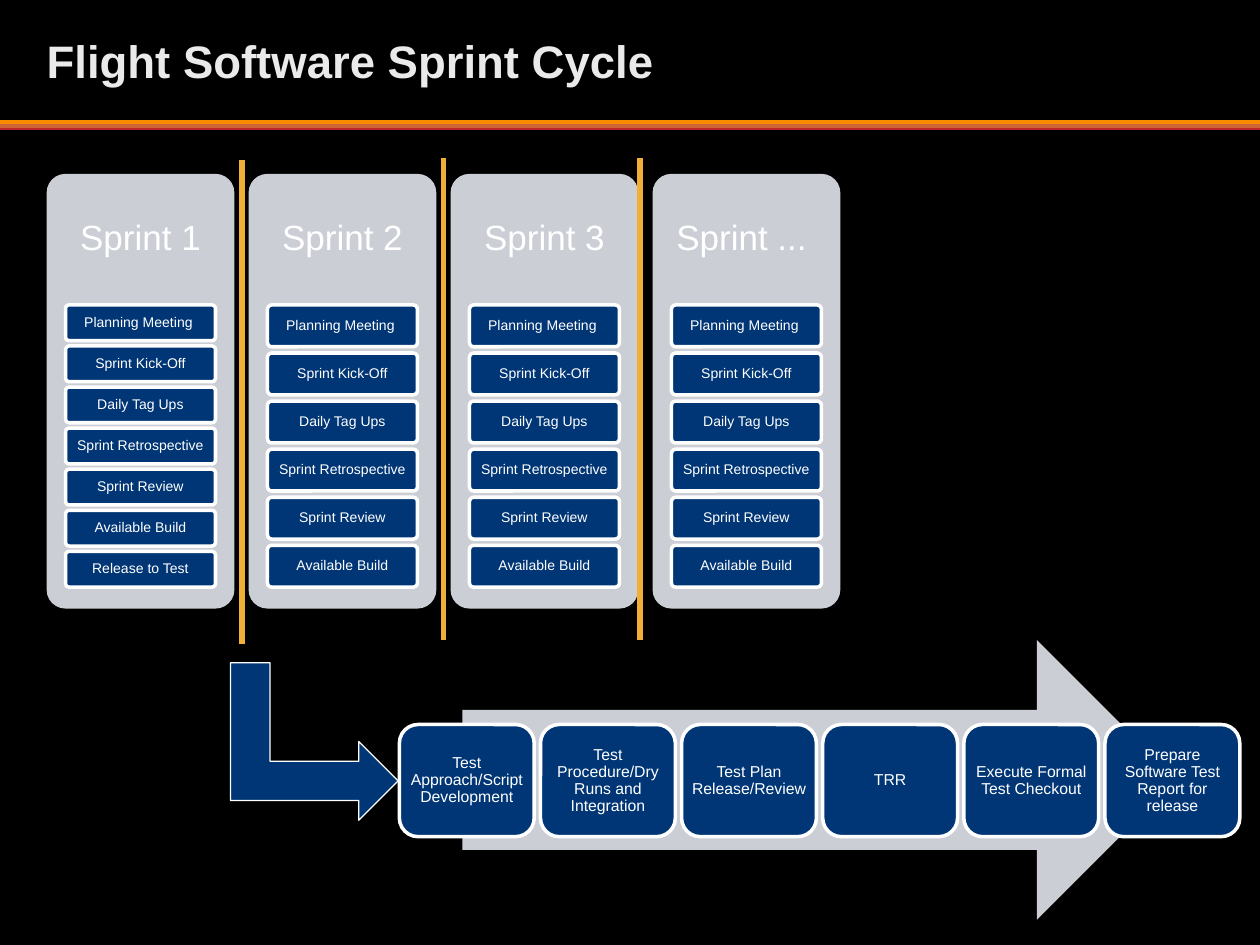
from pptx import Presentation
from pptx.dml.color import RGBColor
from pptx.enum.shapes import MSO_CONNECTOR, MSO_SHAPE
from pptx.enum.text import MSO_ANCHOR, PP_ALIGN
from pptx.oxml.ns import qn
from pptx.util import Inches, Pt
from lxml.etree import SubElement

COLORS = {
    "black": "000000", "white": "FFFFFF", "title": "EAEAEA",
    "card": "CCCED6", "navy": "003675", "divider": "F0B037",
    "orange": "F68B00", "rust": "CD6534", "red": "BF2828",
}

presentation = Presentation()
presentation.slide_width, presentation.slide_height = Inches(10), Inches(7.5)
slide = presentation.slides.add_slide(presentation.slide_layouts[6])
slide.background.fill.solid()
slide.background.fill.fore_color.rgb = RGBColor.from_string(COLORS["black"])


def add_box(text, left, top, width, height, kind=None, fill=None, line_width=0, corner=None,
            size=8, color="white", bold=False, align=PP_ALIGN.CENTER, inset=0.02, spacing=0.9):
    """Add a preset shape, or a text box when no kind is given."""
    frame = [Inches(value) for value in (left, top, width, height)]
    if kind is None:
        shape = slide.shapes.add_textbox(*frame)
    else:
        shape = slide.shapes.add_shape(kind, *frame)
        shape.shadow.inherit = False
        shape.fill.solid()
        shape.fill.fore_color.rgb = RGBColor.from_string(COLORS[fill])
        if line_width:
            shape.line.color.rgb = RGBColor.from_string(COLORS["white"])
            shape.line.width = Pt(line_width)
        else:
            shape.line.fill.background()
        if corner is not None:
            shape.adjustments[0] = corner
    if text:
        text_frame = shape.text_frame
        text_frame.word_wrap = True
        text_frame.vertical_anchor = MSO_ANCHOR.MIDDLE
        text_frame.margin_left = text_frame.margin_right = Inches(inset)
        text_frame.margin_top = text_frame.margin_bottom = Inches(inset)
        paragraph = text_frame.paragraphs[0]
        paragraph.alignment = align
        paragraph.line_spacing = spacing
        run = paragraph.add_run()
        run.text = text
        run.font.name, run.font.size, run.font.bold = "Arial", Pt(size), bold
        run.font.color.rgb = RGBColor.from_string(COLORS[color])
    return shape


def add_line(start, end, color, width):
    points = [Inches(value) for value in (*start, *end)]
    line = slide.shapes.add_connector(MSO_CONNECTOR.STRAIGHT, *points)
    line.line.color.rgb = RGBColor.from_string(COLORS[color])
    line.line.width = Pt(width)
    SubElement(line._element.spPr, qn("a:effectLst"))


# Header rule and title
for y, color, width in [(0.97, "orange", 2.75), (0.99, "orange", 1),
                        (1.02, "red", 2), (1, "rust", 2)]:
    add_line((10, y), (0, y), color, width)
add_box("Flight Software Sprint Cycle", 0.37, 0.02, 9.25, 0.91, size=26, color="title",
        bold=True, align=PP_ALIGN.LEFT, inset=0, spacing=1)

# Sprint cards, each with its tasks sharing one stack height
tasks = ["Planning Meeting ", "Sprint Kick-Off", "Daily Tag Ups", "Sprint Retrospective",
         "Sprint Review", "Available Build"]
sprints = [("Sprint 1", tasks + ["Release to Test"]), ("Sprint 2", tasks),
           ("Sprint 3", tasks), ("Sprint ... ", tasks)]
stack_top, stack_height, gap_ratio = 2.42, 2.24, 0.15
for column, (heading, sprint_tasks) in enumerate(sprints):
    left = 0.37 + 1.603 * column
    add_box("", left, 1.38, 1.49, 3.45, MSO_SHAPE.ROUNDED_RECTANGLE, "card", corner=0.1)
    add_box(heading, left, 1.38, 1.49, 1.04, size=20, inset=0.08)
    count = len(sprint_tasks)
    task_height = stack_height / (count + gap_ratio * (count - 1))
    for row, task in enumerate(sprint_tasks):
        top = stack_top + row * task_height * (1 + gap_ratio)
        add_box(task, left + 0.15, top, 1.19, task_height, MSO_SHAPE.ROUNDED_RECTANGLE,
                "navy", line_width=2, corner=0.1)

# Dividers between sprints
for x, top, bottom in [(1.92, 1.27, 5.11), (3.52, 1.25, 5.08), (5.08, 1.25, 5.08)]:
    add_line((x, top), (x, bottom), "divider", 3)

# Test process arrow and steps
add_box("", 3.67, 5.08, 5.67, 2.22, MSO_SHAPE.RIGHT_ARROW, "card")
steps = ["Test Approach/Script Development", "Test Procedure/Dry Runs and Integration",
         "Test Plan Release/Review", "TRR", "Execute Formal Test Checkout",
         "Prepare Software Test Report for release"]
for index, step in enumerate(steps):
    add_box(step, 3.17 + 1.12 * index, 5.75, 1.07, 0.89, MSO_SHAPE.ROUNDED_RECTANGLE,
            "navy", line_width=2, size=9, inset=0.02)

# Bent arrow from the first sprint to the test process
bent_arrow = add_box("", 1.87, 5.22, 1.25, 1.33, MSO_SHAPE.BENT_UP_ARROW, "navy",
                     line_width=0.75)
bent_arrow.rotation = 90

presentation.save("out.pptx")
